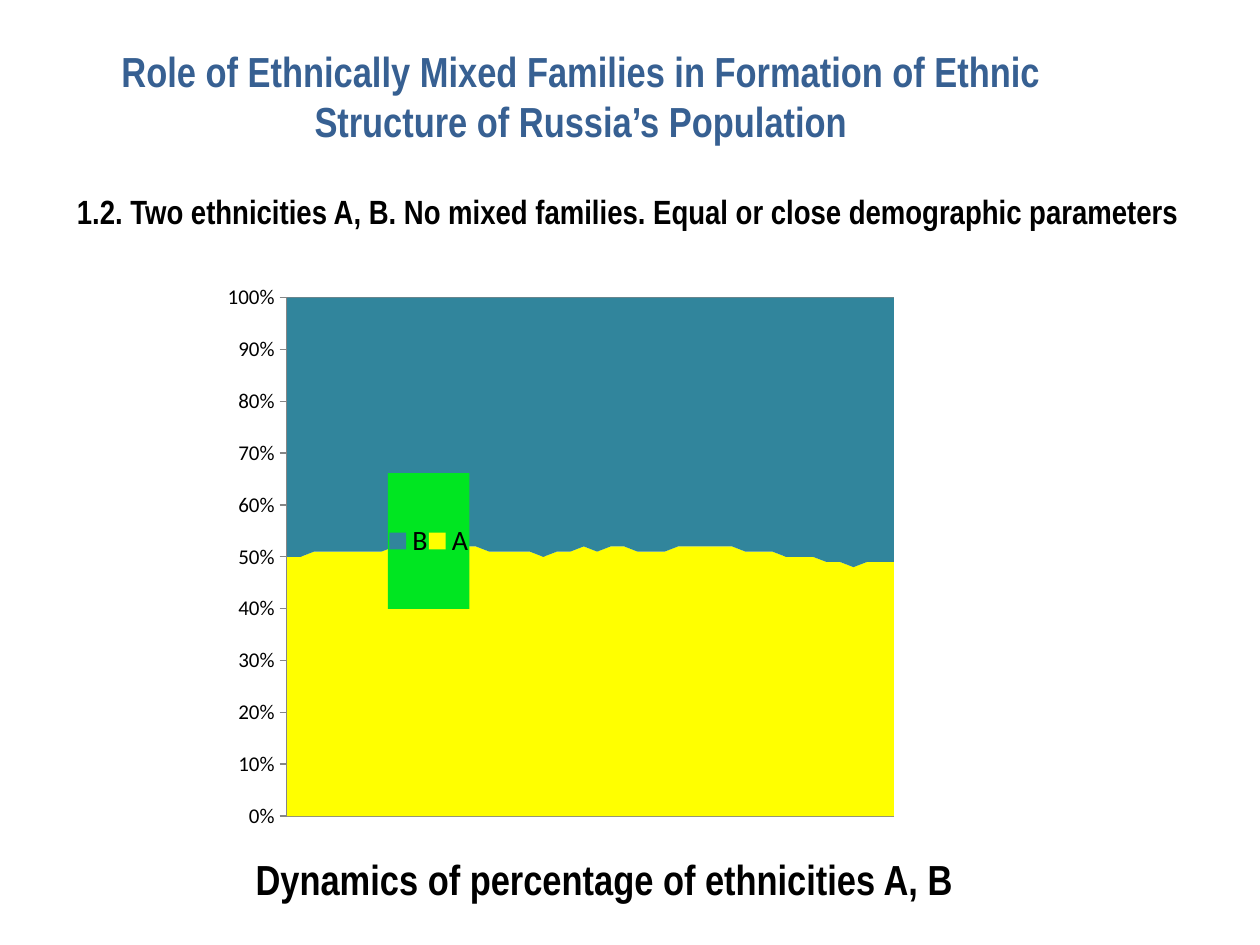
from dataclasses import dataclass

from lxml.etree import SubElement
from pptx import Presentation
from pptx.chart.data import CategoryChartData
from pptx.dml.color import RGBColor
from pptx.enum.chart import XL_CHART_TYPE, XL_LEGEND_POSITION, XL_TICK_MARK
from pptx.enum.text import MSO_ANCHOR, MSO_AUTO_SIZE, PP_ALIGN
from pptx.oxml import parse_xml
from pptx.oxml.ns import nsdecls, qn
from pptx.util import Inches, Pt

SLIDE_WIDTH, SLIDE_HEIGHT = Inches(10), Inches(7.5)
COLORS = {
    "title": "376092",
    "text": "000000",
    "A": "FFFF00",
    "B": "31859C",
    "legend": "00E621",
    "axis": "868686",
}
# Percentage of ethnicity A at each step; B is the rest
SHARE_A = [
    50, 50, 51, 51, 51, 51, 51, 51, 52, 52, 52, 52, 52, 52, 52, 51,
    51, 51, 51, 50, 51, 51, 52, 51, 52, 52, 51, 51, 51, 52, 52, 52,
    52, 52, 51, 51, 51, 50, 50, 50, 49, 49, 48, 49, 49, 49,
]


@dataclass(frozen=True)
class Box:
    """Position and size as shares of the enclosing area."""
    x: float
    y: float
    w: float
    h: float

    def on_slide(self) -> tuple[int, int, int, int]:
        return (int(self.x * SLIDE_WIDTH), int(self.y * SLIDE_HEIGHT),
                int(self.w * SLIDE_WIDTH), int(self.h * SLIDE_HEIGHT))


@dataclass(frozen=True)
class Heading:
    wording: str
    box: Box
    size: float
    color: str = "text"
    align: PP_ALIGN = PP_ALIGN.LEFT
    line_spacing: float = 1.0


TITLE = Heading(
    "Role of Ethnically Mixed Families in Formation of Ethnic Structure of Russia’s Population",
    Box(0.028, 0.028, 0.866, 0.147), 24, "title", PP_ALIGN.CENTER)
CASE = Heading(
    "1.2. Two ethnicities A, B. No mixed families. Equal or close demographic parameters",
    Box(0.051, 0.185, 0.913, 0.084), 19.2, line_spacing=0.8)
CAPTION = Heading("Dynamics of percentage of ethnicities A, B",
                  Box(0.193, 0.888, 0.614, 0.084), 24)
CHART_BOX = Box(0.169, 0.291, 0.606, 0.599)
PLOT_BOX = Box(0.097, 0.04, 0.795, 0.916)
LEGEND_BOX = Box(0.229, 0.35, 0.107, 0.24)


def rgb(name: str) -> RGBColor:
    return RGBColor.from_string(COLORS[name])


def write_heading(shape, heading: Heading) -> None:
    shape.left, shape.top, shape.width, shape.height = heading.box.on_slide()
    frame = shape.text_frame
    frame.text = heading.wording
    frame.word_wrap = True
    frame.auto_size = MSO_AUTO_SIZE.NONE
    frame.vertical_anchor = MSO_ANCHOR.MIDDLE
    paragraph = frame.paragraphs[0]
    paragraph.alignment = heading.align
    paragraph.line_spacing = heading.line_spacing
    paragraph.space_before = Pt(0)
    font = paragraph.runs[0].font
    font.name, font.size, font.bold = "Arial Narrow", Pt(heading.size), True
    font.color.rgb = rgb(heading.color)


def manual_layout(box: Box, inner: bool = False):
    layout = parse_xml(f"<c:layout {nsdecls('c')}><c:manualLayout/></c:layout>")
    settings = {"layoutTarget": "inner"} if inner else {}
    settings |= {"xMode": "edge", "yMode": "edge",
                 "x": box.x, "y": box.y, "w": box.w, "h": box.h}
    for tag, value in settings.items():
        SubElement(layout[0], qn(f"c:{tag}")).set("val", str(value))
    return layout


def place_plot(chart) -> None:
    plot_area = chart._chartSpace.find(".//" + qn("c:plotArea"))
    for automatic in plot_area.findall(qn("c:layout")):
        plot_area.remove(automatic)
    plot_area.insert(0, manual_layout(PLOT_BOX, inner=True))
    # Areas begin right on the value axis
    plot_area.find(".//" + qn("c:crossBetween")).set("val", "midCat")


def add_legend(chart) -> None:
    chart.has_legend = True
    legend = chart.legend
    legend.position = XL_LEGEND_POSITION.RIGHT
    legend.include_in_layout = False
    legend.font.size = Pt(16)
    legend.font.color.rgb = rgb("text")
    element = legend._element
    for automatic in element.findall(qn("c:layout")):
        element.remove(automatic)
    element.find(qn("c:legendPos")).addnext(manual_layout(LEGEND_BOX))
    element.find(qn("c:overlay")).addnext(parse_xml(
        f"<c:spPr {nsdecls('c', 'a')}><a:solidFill>"
        f"<a:srgbClr val=\"{COLORS['legend']}\"/></a:solidFill></c:spPr>"))


def add_dynamics_chart(slide) -> None:
    shares = CategoryChartData()
    shares.categories = [str(step) for step in range(1, len(SHARE_A) + 1)]
    shares.add_series("A", SHARE_A)
    shares.add_series("B", [100 - share for share in SHARE_A])
    chart = slide.shapes.add_chart(
        XL_CHART_TYPE.AREA_STACKED_100, *CHART_BOX.on_slide(), shares).chart
    chart.has_title = False
    chart.font.name, chart.font.size = "Calibri", Pt(10)
    chart.font.color.rgb = rgb("text")
    for series in chart.plots[0].series:
        series.format.fill.solid()
        series.format.fill.fore_color.rgb = rgb(series.name)

    # Axes
    chart.category_axis.visible = False
    percent_axis = chart.value_axis
    percent_axis.minimum_scale, percent_axis.maximum_scale = 0, 1
    percent_axis.major_unit = 0.1
    percent_axis.has_major_gridlines = True
    percent_axis.major_tick_mark = XL_TICK_MARK.CROSS
    percent_axis.format.line.color.rgb = rgb("axis")
    percent_axis.tick_labels.font.size = Pt(12)
    percent_axis.tick_labels.number_format = "0%"
    percent_axis.tick_labels.number_format_is_linked = False

    place_plot(chart)
    add_legend(chart)


def main() -> None:
    presentation = Presentation()
    presentation.slide_width, presentation.slide_height = SLIDE_WIDTH, SLIDE_HEIGHT
    slide = presentation.slides.add_slide(presentation.slide_layouts[0])

    # Headings and caption
    write_heading(slide.shapes.title, TITLE)
    write_heading(slide.placeholders[1], CASE)
    write_heading(slide.shapes.add_textbox(*CAPTION.box.on_slide()), CAPTION)

    # Chart of both ethnicities
    add_dynamics_chart(slide)
    presentation.save("out.pptx")


if __name__ == "__main__":
    main()
